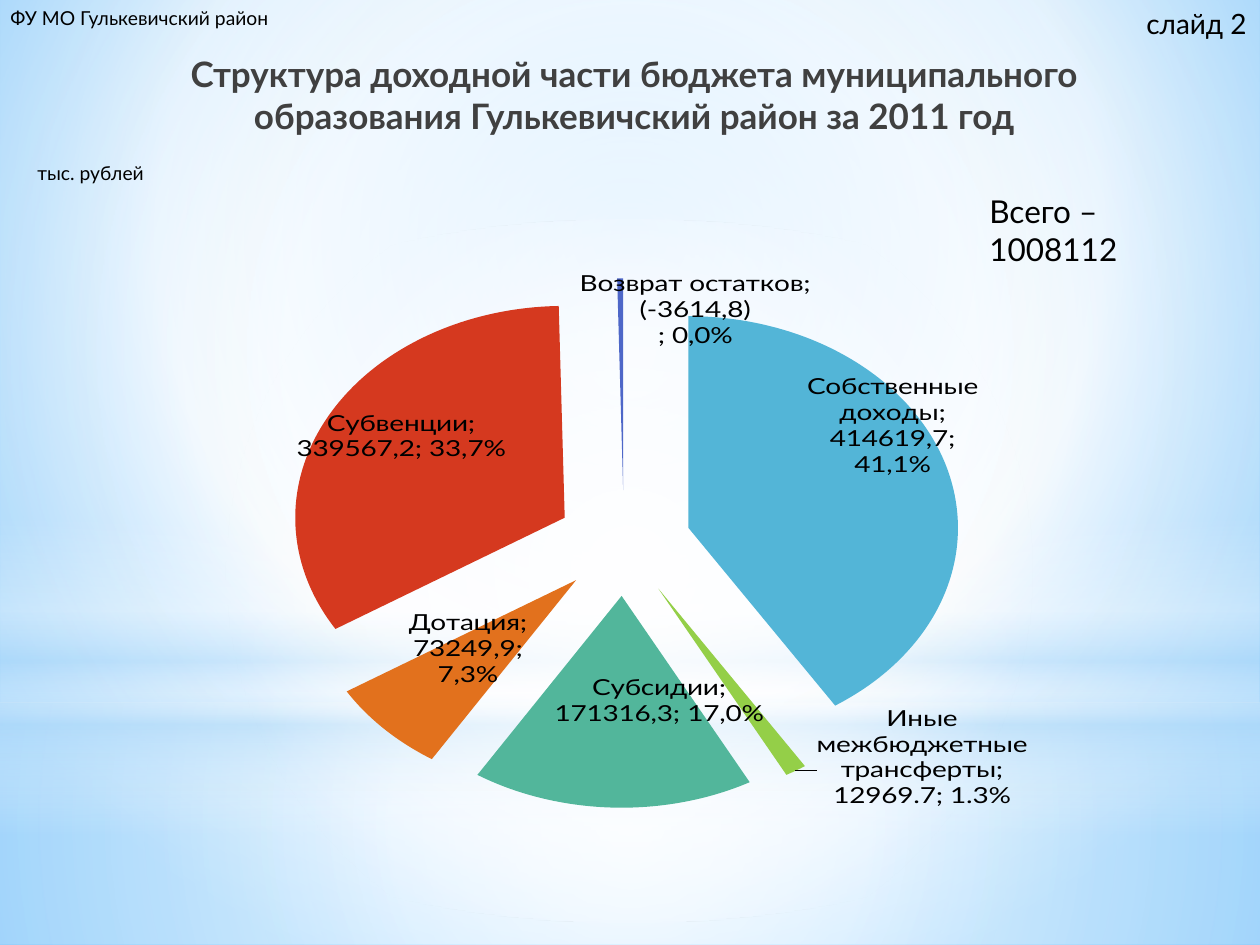
from dataclasses import dataclass

from lxml import etree
from pptx import Presentation
from pptx import util as u
from pptx.chart.data import CategoryChartData
from pptx.dml.color import RGBColor
from pptx.enum import chart as ch, shapes, text
from pptx.oxml import ns, parse_xml

PX = 7257  # EMU in one px, 126 px to the inch
FONT = "Lato"
BLACK = RGBColor(0x00, 0x00, 0x00)
CHARCOAL = RGBColor(0x40, 0x40, 0x40)
NAVY = RGBColor(0x21, 0x27, 0x45)
WHITE = RGBColor(0xFF, 0xFF, 0xFF)
PALE = RGBColor(0xB4, 0xDC, 0xFA)
SKY = RGBColor(0x9E, 0xD5, 0xFF)
AZURE = RGBColor(0x5B, 0xB9, 0xFF)
INDIGO = RGBColor(0x4E, 0x67, 0xC8)
CYAN = RGBColor(0x5E, 0xCC, 0xF3)
LIME = RGBColor(0xA7, 0xEA, 0x52)
TEAL = RGBColor(0x5D, 0xCE, 0xAF)
ORANGE = RGBColor(0xFF, 0x80, 0x21)
RED = RGBColor(0xF1, 0x41, 0x24)

RECT, OVAL = shapes.MSO_SHAPE.RECTANGLE, shapes.MSO_SHAPE.OVAL
CENTRE = (50, 50, 50, 50)


@dataclass
class Gradient:
    stops: list  # (position %, colour, opacity %)
    focus: tuple | None = None  # left, top, right, bottom in %; None is top to bottom


@dataclass
class Glow:
    kind: shapes.MSO_SHAPE
    box: tuple
    gradient: Gradient


@dataclass
class Caption:
    words: str
    box: tuple
    size: int
    wrap: bool = True


@dataclass
class Slice:
    name: str
    value: float | None
    color: RGBColor
    label: tuple = ()  # lines; empty shows the computed label
    shift: tuple = (0, 0)  # label offset in px from the outer end
    shade: int = 76  # %


BACKDROP = Gradient([(0, SKY, 100), (60, WHITE, 100), (100, AZURE, 100)], (20, 10, 20, 60))
TITLE_INK = Gradient([(0, BLACK, 100), (40, CHARCOAL, 100), (100, NAVY, 65)])
GLOWS = [
    Glow(RECT, (0, 703, 1260, 242),
         Gradient([(0, WHITE, 91), (37, WHITE, 76), (100, PALE, 79)], CENTRE)),
    Glow(RECT, (0, 0, 1260, 703),
         Gradient([(0, WHITE, 89), (48, WHITE, 62), (100, PALE, 79)], CENTRE)),
    Glow(RECT, (0, 519, 1260, 315),
         Gradient([(0, WHITE, 0), (29, WHITE, 30), (45, PALE, 40),
                   (55, WHITE, 26), (65, PALE, 60), (100, WHITE, 0)])),
    Glow(OVAL, (0, 220, 1260, 703),
         Gradient([(0, WHITE, 100), (56, WHITE, 0)], CENTRE)),
]
TITLE = "Структура доходной части бюджета муниципального образования Гулькевичский район за 2011 год"
CAPTIONS = [
    Caption("тыс. рублей", (25, 155, 139, 39), 11),
    Caption("Всего – 1008112", (977, 186, 256, 50), 18),
    Caption("слайд 2", (1134, 0, 126, 47), 16, False),
    Caption("ФУ МО Гулькевичский район", (-2, 0, 284, 37), 11, False),
]
CHART_BOX = (44, 195, 1160, 684)
SLICES = [
    Slice("", None, INDIGO),
    Slice("Собственные доходы", 414619.7, CYAN,
          ("Собственные доходы; 414619,7; 41,1%",), (-147, 13)),
    Slice("Иные межбюджетные трансферты", 12969.7, LIME, (), (17, -88)),
    Slice("Субсидии", 171316.3, TEAL, ("Субсидии; 171316,3; 17,0%",), (47, -177)),
    Slice("Дотация", 73249.9, ORANGE, ("Дотация;", "73249,9;", "7,3%"), (148, -158)),
    Slice("Субвенции", 339567.2, RED, ("Субвенции; 339567,2; 33,7%",), (184, 60)),
    Slice("Возврат остатков", 3614.8, INDIGO,
          ("Возврат остатков;", "(-3614,8)", "; 0,0%"), (75, 92), 100),
]


def emu(box: tuple) -> list:
    return [u.Emu(v * PX) for v in box]


def set_gradient(fill, owner, gradient: Gradient) -> None:
    """Fill owner with the gradient; fill is the python-pptx fill of that element."""
    fill.solid()
    fill.fore_color.rgb = WHITE
    stops = "".join(
        f'<a:gs pos="{pos * 1000}"><a:srgbClr val="{color}">'
        f'<a:alpha val="{opacity * 1000}"/></a:srgbClr></a:gs>'
        for pos, color, opacity in gradient.stops)
    if gradient.focus:
        sides = " ".join(f'{k}="{v * 1000}"' for k, v in zip("ltrb", gradient.focus))
        shade = f'<a:path path="circle"><a:fillToRect {sides}/></a:path>'
    else:
        shade = '<a:lin ang="5400000" scaled="0"/>'
    solid = next(owner.iter(ns.qn("a:solidFill")))
    solid.getparent().replace(solid, parse_xml(
        f'<a:gradFill {ns.nsdecls("a")} rotWithShape="1">'
        f"<a:gsLst>{stops}</a:gsLst>{shade}</a:gradFill>"))


def add_run(p, words: str, size: int):
    r = p.add_run()
    r.text = words
    r.font.size, r.font.name = u.Pt(size), FONT
    r.font.color.rgb = BLACK
    return r


def add_glow(s, glow: Glow) -> None:
    sp = s.shapes.add_shape(glow.kind, *emu(glow.box))
    sp.shadow.inherit = False
    sp.line.fill.background()
    set_gradient(sp.fill, sp._element.spPr, glow.gradient)


def add_caption(s, caption: Caption) -> None:
    tf = s.shapes.add_textbox(*emu(caption.box)).text_frame
    tf.word_wrap = caption.wrap
    add_run(tf.paragraphs[0], caption.words, caption.size)


def add_title(s) -> None:
    sp = s.shapes.title
    sp.left, sp.top, sp.width, sp.height = emu((84, 46, 1101, 157))
    tf = sp.text_frame
    tf.vertical_anchor = text.MSO_ANCHOR.TOP
    p = tf.paragraphs[0]
    p.alignment = text.PP_ALIGN.CENTER
    r = add_run(p, TITLE, 20)
    r.font.bold = True
    set_gradient(r.font.fill, r._r, TITLE_INK)
    # later siblings keep the glows behind the title
    s.shapes._spTree.append(sp._element)


def chart_node(tag: str, **attrs):
    return etree.Element(ns.qn(f"c:{tag}"), attrs)


def manual_layout(**values):
    layout = chart_node("layout")
    manual = etree.SubElement(layout, ns.qn("c:manualLayout"))
    for tag, value in values.items():
        manual.append(chart_node(tag, val=str(value)))
    return layout


def show_all_parts(labels) -> None:
    """Show category, value and percentage, separated by semicolons."""
    for tag in ("showVal", "showCatName", "showPercent"):
        labels.find(ns.qn(f"c:{tag}")).set("val", "1")
    separator = chart_node("separator")
    separator.text = "; "
    labels.find(ns.qn("c:showBubbleSize")).addnext(separator)


def paint_slice(point, part: Slice) -> None:
    fill = point.format.fill
    fill.solid()
    fill.fore_color.rgb = part.color
    if part.shade < 100:
        color = next(point.format._element.iter(ns.qn("a:srgbClr")))
        etree.SubElement(color, ns.qn("a:shade"), val=str(part.shade * 1000))


def label_slice(point, part: Slice) -> None:
    label = point.data_label
    if part.label:
        tf = label.text_frame
        for i, line in enumerate(part.label):
            add_run(tf.paragraphs[0] if i == 0 else tf.add_paragraph(), line, 16)
    else:
        label.font.size, label.font.name = u.Pt(16), FONT
    label.position = ch.XL_LABEL_POSITION.OUTSIDE_END


def add_pie(s) -> None:
    data = CategoryChartData()
    data.categories = [part.name for part in SLICES]
    data.add_series("Series 1", [part.value for part in SLICES])
    chart = s.shapes.add_chart(ch.XL_CHART_TYPE.PIE, *emu(CHART_BOX), data).chart
    chart.has_legend = chart.has_title = False
    chart.font.size, chart.font.name = u.Pt(18), FONT
    chart.font.color.rgb = BLACK
    series = chart.plots[0].series[0]
    labels = series.data_labels
    labels.number_format, labels.number_format_is_linked = "0.0%", False
    labels.font.size, labels.font.name = u.Pt(16), FONT
    ser = series._element

    for i, part in enumerate(SLICES):
        point = series.points[i]
        point.format.fill.solid()
        dpt = ser.findall(ns.qn("c:dPt"))[-1]
        paint_slice(point, part)
        dpt.find(ns.qn("c:spPr")).addprevious(chart_node("explosion", val="25"))
        if part.value is not None:
            label_slice(point, part)
    ser.find(ns.qn("c:dPt")).addprevious(chart_node("explosion", val="25"))

    group = ser.find(ns.qn("c:dLbls"))
    show_all_parts(group)
    for node in group.findall(ns.qn("c:dLbl")):
        idx = node.find(ns.qn("c:idx"))
        part = SLICES[int(idx.get("val"))]
        show_all_parts(node)
        if not part.label:
            idx.addnext(chart_node("numFmt", formatCode="0.0%", sourceLinked="0"))
        x, y = (round(d / size, 4) for d, size in zip(part.shift, CHART_BOX[2:]))
        idx.addnext(manual_layout(x=x, y=y))
    hidden = chart_node("dLbl")
    hidden.extend([chart_node("idx", val="0"), chart_node("delete", val="1")])
    group.insert(0, hidden)

    area = next(chart._chartSpace.iter(ns.qn("c:plotArea")))
    for old in area.findall(ns.qn("c:layout")):
        area.remove(old)
    area.insert(0, manual_layout(layoutTarget="inner", xMode="edge", yMode="edge",
                                 x=0, y=0.015, w=1, h=0.985))


def main() -> None:
    prs = Presentation()
    prs.slide_width, prs.slide_height = u.Inches(10), u.Inches(7.5)
    s = prs.slides.add_slide(prs.slide_layouts[5])
    set_gradient(s.background.fill, s._element.cSld, BACKDROP)
    for glow in GLOWS:
        add_glow(s, glow)
    add_title(s)
    add_pie(s)
    for caption in CAPTIONS:
        add_caption(s, caption)
    prs.save("out.pptx")


if __name__ == "__main__":
    main()
